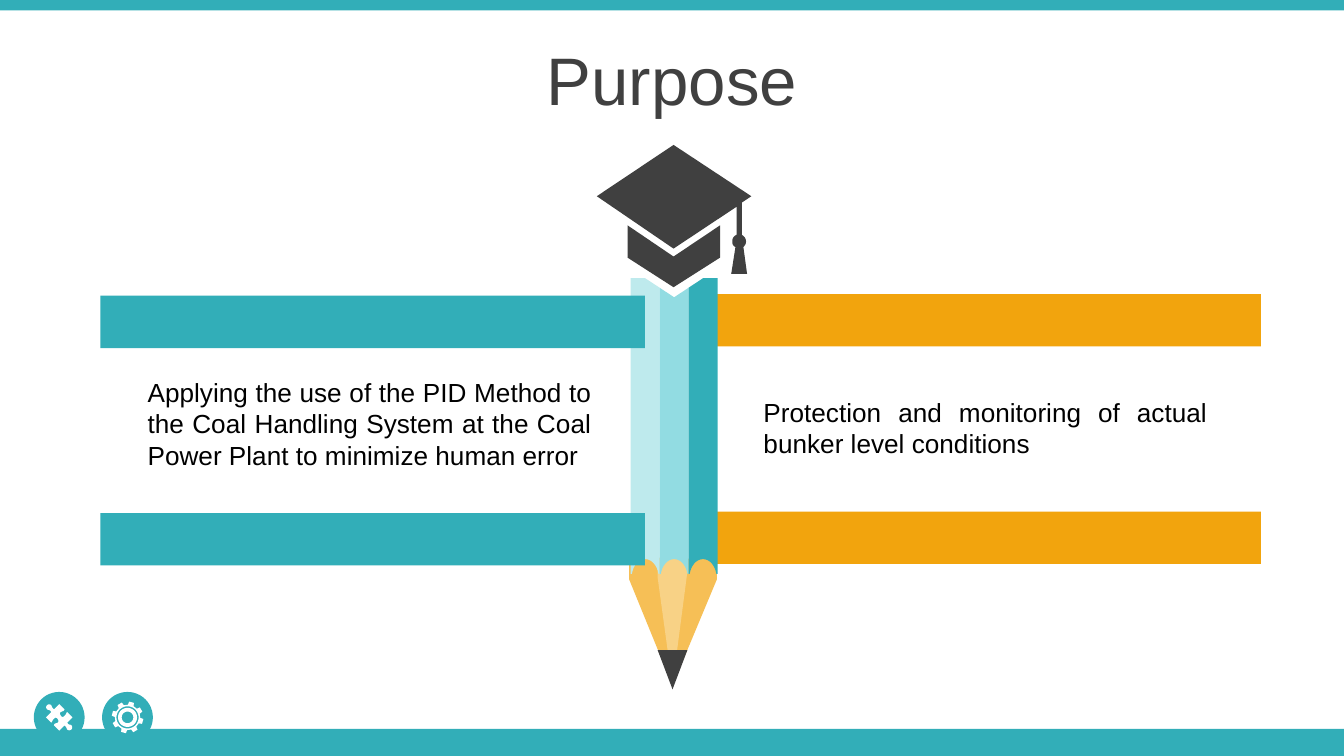
from dataclasses import dataclass
from math import cos, radians, sin

from pptx import Presentation
from pptx.dml.color import RGBColor
from pptx.enum import shapes, text
from pptx.util import Cm, Pt

TEAL = RGBColor(0x32, 0xAE, 0xB8)
MID_TEAL = RGBColor(0x92, 0xDC, 0xE2)
PALE_TEAL = RGBColor(0xBE, 0xEA, 0xED)
ORANGE = RGBColor(0xF2, 0xA4, 0x0D)
WOOD = RGBColor(0xF6, 0xBF, 0x56)
PALE_WOOD = RGBColor(0xF8, 0xD2, 0x86)
CHARCOAL = RGBColor(0x40, 0x40, 0x40)
BLACK = RGBColor(0, 0, 0)
WHITE = RGBColor(0xFF, 0xFF, 0xFF)
FONT = "Arial"
RECTANGLE = shapes.MSO_SHAPE.RECTANGLE
OVAL = shapes.MSO_SHAPE.OVAL
TRIANGLE = shapes.MSO_SHAPE.ISOSCELES_TRIANGLE


@dataclass
class Box:
    """A region of the page, in centimetres."""
    left: float
    top: float
    width: float
    height: float

    def inner(self, x, y, width, height):
        return Box(self.left + x, self.top + y, width, height)

    def lengths(self):
        return [Cm(v) for v in (self.left, self.top, self.width, self.height)]


def paint(shape, color):
    shape.shadow.inherit = False
    shape.fill.solid()
    shape.fill.fore_color.rgb = color
    shape.line.fill.background()
    return shape


def add_preset(page, kind, box, color):
    return paint(page.shapes.add_shape(kind, *box.lengths()), color)


def flatten(steps, pieces=8):
    """Turn points and six-number Bezier steps into a list of points."""
    points = []
    for step in steps:
        if len(step) == 2:
            points.append(step)
            continue
        ends = (points[-1], step[:2], step[2:4], step[4:])
        for i in range(1, pieces + 1):
            t = i / pieces
            weights = ((1 - t) ** 3, 3 * t * (1 - t) ** 2,
                       3 * t * t * (1 - t), t ** 3)
            points.append(tuple(sum(w * end[axis] for w, end in zip(weights, ends))
                                for axis in (0, 1)))
    return points


def add_outline(page, box, contours, color):
    """Draw closed contours given in centimetres from the box corner."""
    builder = None
    for steps in contours:
        points = [(Cm(x), Cm(y)) for x, y in flatten(steps)]
        if builder is None:
            builder = page.shapes.build_freeform(*points[0])
        else:
            builder.move_to(*points[0])
        builder.add_line_segments(points[1:], close=True)
    return paint(builder.convert_to_shape(Cm(box.left), Cm(box.top)), color)


def write(paragraph, words, size, color, alignment):
    paragraph.text = words
    paragraph.alignment = alignment
    paragraph.font.name = FONT
    paragraph.font.size = Pt(size)
    paragraph.font.color.rgb = color


def add_title(page, box, words):
    title = page.shapes.title
    title.left, title.top, title.width, title.height = box.lengths()
    title.text_frame.vertical_anchor = text.MSO_ANCHOR.MIDDLE
    write(title.text_frame.paragraphs[0], words, 36, CHARCOAL, text.PP_ALIGN.CENTER)


def add_panel(page, box, words, text_top, text_height, color):
    """Place a statement between two coloured bars."""
    bar = 0.99
    for y in (0, box.height - bar):
        add_preset(page, RECTANGLE, box.inner(0, y, box.width, bar), color)
    place = box.inner(0.64, text_top, 8.89, text_height)
    frame = page.shapes.add_textbox(*place.lengths()).text_frame
    frame.word_wrap = True
    write(frame.paragraphs[0], words, 14, BLACK, text.PP_ALIGN.JUSTIFY)


def add_pencil(page, box):
    facet = box.width / 3
    half = facet / 2
    end = 5.59
    arch = end - 0.28
    tip_top = box.height - 0.74
    add_outline(page, box, [[(-0.03, 5.28), (1.63, 5.31), (1.63, 5.69),
                             (0.79, 7.7), (-0.03, 5.69)]], WOOD)
    add_outline(page, box, [[(0.51, 5.28), (1.07, 5.28), (1.07, 5.56),
                             (0.79, 7.7), (0.51, 5.66)]], PALE_WOOD)
    facets = ((PALE_TEAL, (0, 0, 0.18)), (MID_TEAL, (0.18, 0.36, 0.18)),
              (TEAL, (0.18, 0, 0)))
    for i, (color, heights) in enumerate(facets):
        steps = list(zip((0, half, facet), heights))
        steps += [(facet, end), (facet - 0.02, end),
                  (facet - 0.05, 5.43, half + 0.13, arch, half, arch),
                  (half - 0.13, arch, 0.05, 5.43, 0.02, end), (0, end)]
        add_outline(page, box.inner(i * facet, 0, facet, end), [steps], color)
    tip = add_preset(page, TRIANGLE, box.inner(0.51, tip_top, 0.56, 0.74), CHARCOAL)
    tip.rotation = 180


def add_graduation_cap(page, box):
    band = [(0.58, 1.52), (1.45, 2.11), (2.33, 1.52),
            (2.33, 2.13), (1.45, 2.69), (0.58, 2.13)]
    board_and_tassel = [
        (1.45, 0), (2.92, 0.97), (2.74, 1.09), (2.74, 1.7),
        (2.79, 1.73, 2.82, 1.77, 2.82, 1.83), (2.82, 1.88, 2.79, 1.91, 2.77, 1.93),
        (2.84, 2.44), (2.54, 2.44), (2.62, 1.93),
        (2.58, 1.91, 2.56, 1.88, 2.56, 1.83), (2.56, 1.77, 2.58, 1.73, 2.64, 1.7),
        (2.64, 1.17), (1.45, 1.96), (0, 0.97)]
    add_outline(page, box, [band, board_and_tassel], CHARCOAL)


def add_puzzle_badge(page, box):
    add_preset(page, OVAL, box, TEAL)
    half = [(-0.23, -0.23), (-0.25, -0.2, -0.25, -0.18, -0.23, -0.15),
            (-0.2, -0.13, -0.18, -0.15, -0.15, -0.1), (-0.25, 0), (-0.15, 0.1),
            (-0.13, 0.08, -0.13, 0.05, -0.1, 0.03), (-0.08, 0, -0.05, 0, -0.03, 0.03),
            (-0.02, 0.05, 0, 0.08, -0.03, 0.1), (-0.08, 0.13, -0.08, 0.1, -0.1, 0.15),
            (0, 0.25), (0.1, 0.15), (0.13, 0.18, 0.13, 0.18, 0.15, 0.23),
            (0.18, 0.25, 0.2, 0.25, 0.23, 0.23)]
    turned = [tuple(-v for v in step) for step in half]
    center = box.inner(box.width / 2, box.height / 2, 0, 0)
    add_outline(page, center, [half + turned], WHITE)


def polar(radius, angle):
    return radius * sin(radians(angle)), -radius * cos(radians(angle))


def add_gear_badge(page, box):
    add_preset(page, OVAL, box, TEAL)
    corners = ((0.24, -13), (0.3, -9), (0.3, 9), (0.24, 13))
    teeth = [polar(radius, 15 + 45 * i + turn)
             for i in range(8) for radius, turn in corners]
    rings = [[polar(radius, angle) for angle in range(0, 360, 10)]
             for radius in (0.21, 0.18, 0.11)]
    center = box.inner(box.width / 2, box.height / 2, 0, 0)
    add_outline(page, center, [teeth] + rings, WHITE)


def build_purpose_page(deck):
    page = deck.slides.add_slide(deck.slide_layouts[5])
    add_preset(page, RECTANGLE, Box(0, 13.78, 25.4, 0.51), TEAL)
    add_preset(page, RECTANGLE, Box(0, 0, 25.4, 0.2), TEAL)
    add_title(page, Box(0, 0.69, 25.4, 1.6), "Purpose")
    add_panel(page, Box(13.54, 5.56, 10.29, 5.1),
              "Protection and monitoring of actual bunker level conditions",
              1.81, 1.45, ORANGE)
    add_pencil(page, Box(11.92, 5.26, 1.64, 7.77))
    add_graduation_cap(page, Box(11.28, 2.74, 2.92, 2.69))
    add_panel(page, Box(1.9, 5.59, 10.29, 5.1),
              "Applying the use of the PID Method to the Coal Handling System "
              "at the Coal Power Plant to minimize human error",
              1.4, 2.06, TEAL)
    add_puzzle_badge(page, Box(0.64, 13.08, 0.96, 0.96))
    add_gear_badge(page, Box(1.93, 13.08, 0.96, 0.96))


def main():
    deck = Presentation()
    deck.slide_width, deck.slide_height = Cm(25.4), Cm(14.29)
    build_purpose_page(deck)
    deck.save("out.pptx")


if __name__ == "__main__":
    main()
